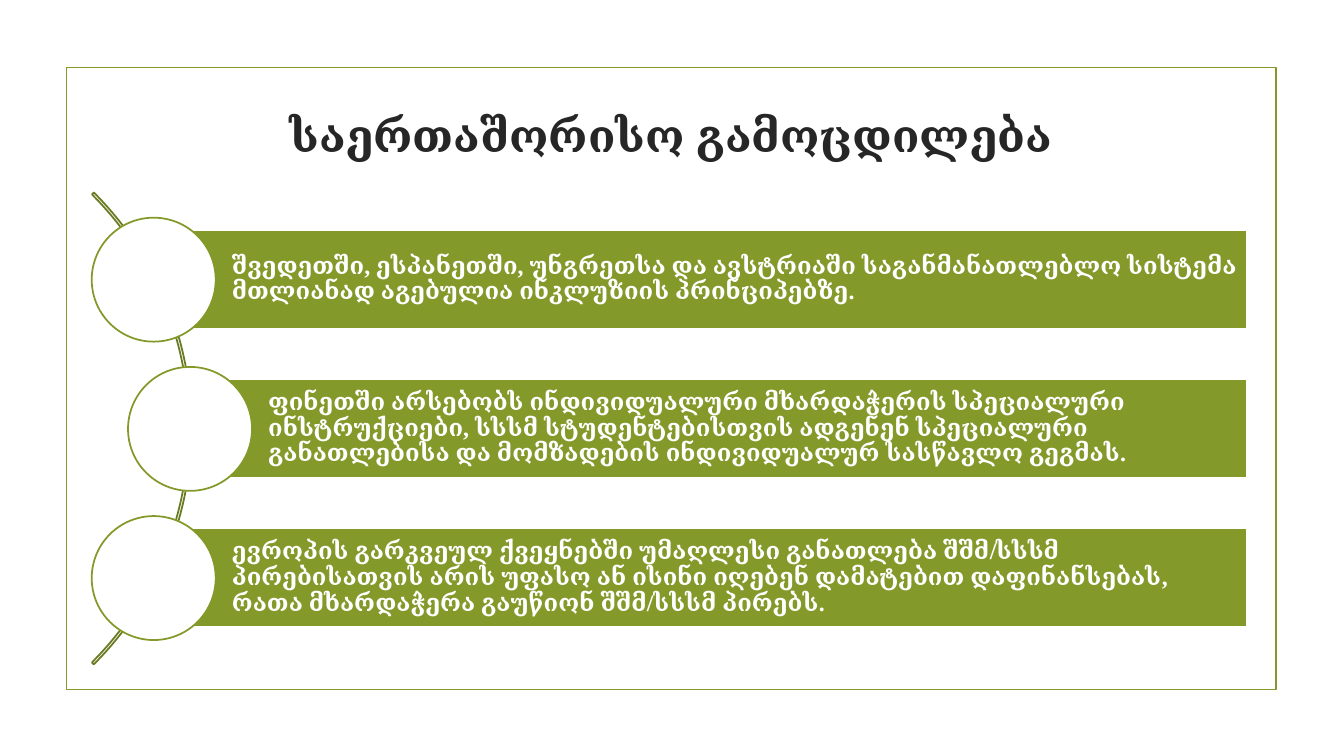
from pptx import Presentation
from pptx.dml.color import RGBColor
from pptx.enum.shapes import MSO_SHAPE
from pptx.enum.text import MSO_ANCHOR, PP_ALIGN
from pptx.util import Inches, Pt

THEME = {
    "font": "Times New Roman",
    "green": RGBColor.from_string("83992A"),
    "dark_green": RGBColor.from_string("697B22"),
    "white": RGBColor.from_string("FFFFFF"),
    "ink": RGBColor.from_string("262626"),
    "title": Pt(32),
    "body": Pt(17),
    "line": Pt(1.25),
}


def add_outlined(kind, left, top, width, height, line, fill=None):
    sp = s.shapes.add_shape(kind, Inches(left), Inches(top), Inches(width), Inches(height))
    sp.shadow.inherit = False
    if fill is None:
        sp.fill.background()
    else:
        sp.fill.solid()
        sp.fill.fore_color.rgb = THEME[fill]
    sp.line.color.rgb = THEME[line]
    sp.line.width = THEME["line"]
    return sp


def write(sp, text, size, color, align, frame):
    tf = sp.text_frame
    for name, value in frame.items():
        setattr(tf, name, value)
    p = tf.paragraphs[0]
    p.alignment = align
    p.line_spacing = 0.9
    r = p.add_run()
    r.text = text
    for name, value in {"name": THEME["font"], "size": THEME[size], "bold": True}.items():
        setattr(r.font, name, value)
    r.font.color.rgb = THEME[color]


prs = Presentation()
prs.slide_width = Inches(13.33)
prs.slide_height = Inches(7.5)
s = prs.slides.add_slide(prs.slide_layouts[5])

add_outlined(MSO_SHAPE.RECTANGLE, 0.66, 0.67, 12, 6.17, "green")

title = s.shapes.title
for name, value in {"left": 1.41, "top": 0.94, "width": 10.5, "height": 0.85}.items():
    setattr(title, name, Inches(value))
write(title, "საერთაშორისო გამოცდილება", "title", "ink", PP_ALIGN.CENTER,
      {"word_wrap": True, "vertical_anchor": MSO_ANCHOR.MIDDLE})

arc = add_outlined(MSO_SHAPE.BLOCK_ARC, -4.72, 0.94, 6.62, 6.62, "dark_green")
for i, value in enumerate((189, 27, 0.004)):
    arc.adjustments[i] = value

BAR_FRAME = {
    "word_wrap": True,
    "vertical_anchor": MSO_ANCHOR.MIDDLE,
    "margin_left": Inches(0.78),
    "margin_right": Inches(0.05),
    "margin_top": Inches(0.05),
    "margin_bottom": Inches(0.05),
}
BAR_RIGHT, FIRST_TOP, PITCH = 12.37, 2.28, 1.48
experiences = [
    (1.52, "შვედეთში, ესპანეთში, უნგრეთსა და ავსტრიაში საგანმანათლებლო სისტემა მთლიანად "
           "აგებულია ინკლუზიის პრინციპებზე."),
    (1.88, "ფინეთში არსებობს ინდივიდუალური მხარდაჭერის სპეციალური ინსტრუქციები, სსსმ "
           "სტუდენტებისთვის ადგენენ სპეციალური განათლებისა და მომზადების ინდივიდუალურ "
           "სასწავლო გეგმას."),
    (1.52, "ევროპის გარკვეულ ქვეყნებში უმაღლესი განათლება შშმ/სსსმ პირებისათვის არის უფასო "
           "ან ისინი იღებენ დამატებით დაფინანსებას, რათა მხარდაჭერა გაუწიონ შშმ/სსსმ პირებს."),
]
for i, (left, text) in enumerate(experiences):
    top = FIRST_TOP + i * PITCH
    bar = add_outlined(MSO_SHAPE.RECTANGLE, left, top, BAR_RIGHT - left, 0.98, "white", "green")
    write(bar, text, "body", "white", PP_ALIGN.LEFT, BAR_FRAME)
    add_outlined(MSO_SHAPE.OVAL, left - 0.61, top - 0.12, 1.23, 1.23, "green", "white")

prs.save("out.pptx")
